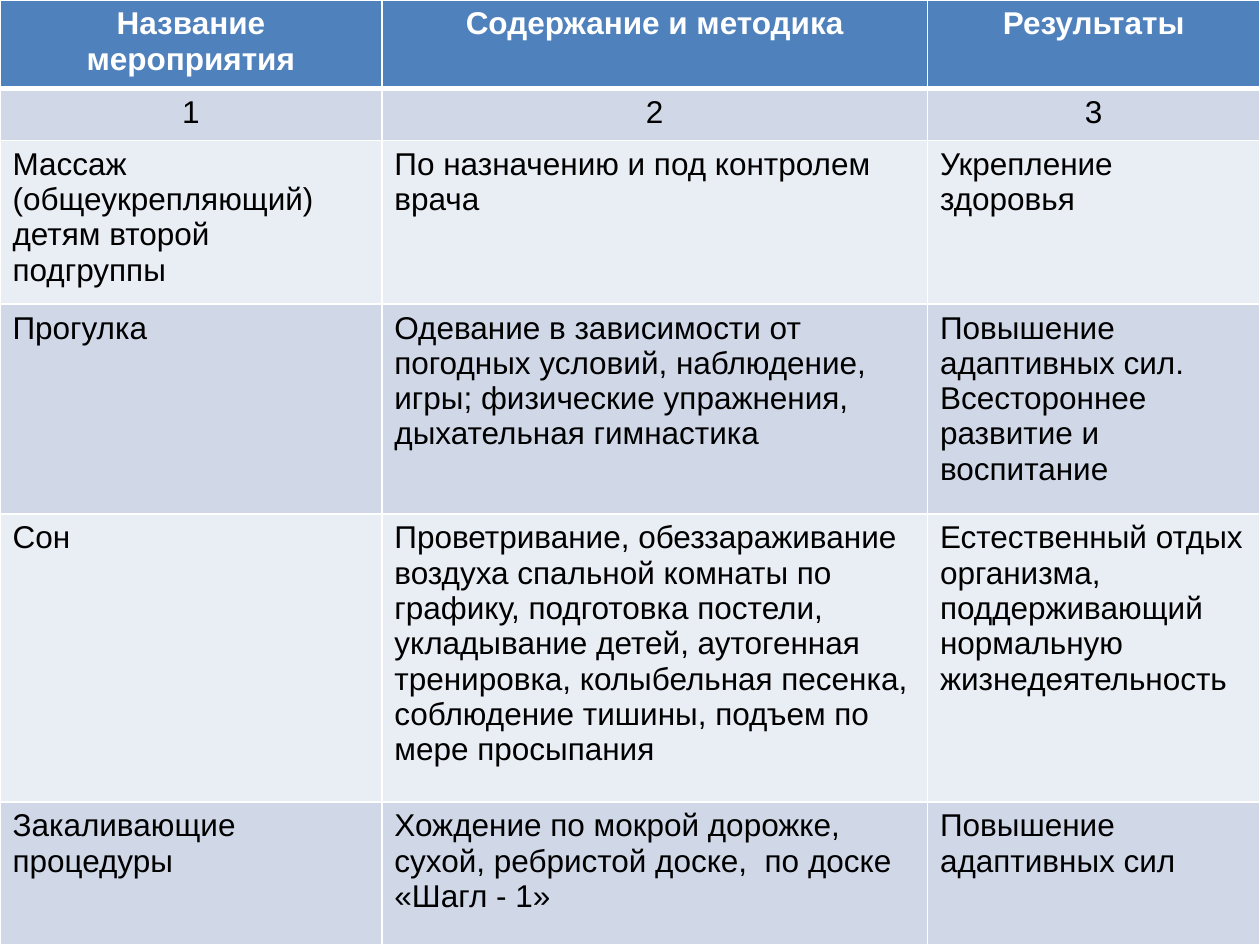
import pptx
import pptx.dml.color
import pptx.enum.text
import pptx.oxml.ns
import pptx.util
from lxml import etree

Pt = pptx.util.Pt

# Content
HEADER = ("Название мероприятия", "Содержание и методика", "Результаты")
NUMBERS = ("1", "2", "3")
ACTIVITIES = [
    ("Массаж (общеукрепляющий) детям второй подгруппы",
     "По назначению и под контролем врача",
     "Укрепление здоровья"),
    ("Прогулка",
     "Одевание в зависимости от погодных условий, наблюдение, игры; "
     "физические упражнения, дыхательная гимнастика",
     "Повышение адаптивных сил. Всестороннее развитие и воспитание"),
    ("Сон",
     "Проветривание, обеззараживание воздуха спальной комнаты по графику, "
     "подготовка постели, укладывание детей, аутогенная тренировка, "
     "колыбельная песенка, соблюдение тишины, подъем по мере просыпания",
     "Естественный отдых организма, поддерживающий нормальную "
     "жизнедеятельность"),
    ("Закаливающие процедуры",
     "Хождение по мокрой дорожке, сухой, ребристой доске,  по доске "
     "«Шагл - 1»",
     "Повышение адаптивных сил"),
]
ROWS = [HEADER, NUMBERS] + ACTIVITIES

# Layout and style
WIDTH, HEIGHT = 720, 540
COLUMN_WIDTHS = (218.2, 311.8, 190)
ROW_HEIGHTS = (50.4, 29.8, 93.6, 120, 164.5, 81.7)
COLORS = {
    "header": "4F81BD",
    "band_dark": "D0D8E8",
    "band_light": "E9EDF4",
    "border": "FFFFFF",
    "header_text": "FFFFFF",
    "text": "000000",
}


def rgb(name):
    return pptx.dml.color.RGBColor.from_string(COLORS[name])


def set_borders(cell, bottom, top):
    """Draw the four cell borders; widths are in points."""
    properties = cell._tc.get_or_add_tcPr()
    for side, width in (("L", 1), ("R", 1), ("T", top), ("B", bottom)):
        line = etree.SubElement(properties, pptx.oxml.ns.qn(f"a:ln{side}"),
                                w=str(Pt(width)))
        fill = etree.SubElement(line, pptx.oxml.ns.qn("a:solidFill"))
        etree.SubElement(fill, pptx.oxml.ns.qn("a:srgbClr"),
                         val=COLORS["border"])


def fill_cell(cell, text, row):
    is_header = row == 0
    set_borders(cell, bottom=3 if is_header else 1, top=3 if row == 1 else 1)
    band = "band_dark" if row % 2 else "band_light"
    cell.fill.solid()
    cell.fill.fore_color.rgb = rgb("header" if is_header else band)

    cell.text = text
    paragraph = cell.text_frame.paragraphs[0]
    if row < 2:
        paragraph.alignment = pptx.enum.text.PP_ALIGN.CENTER
    paragraph.font.name = "Arial"
    paragraph.font.size = Pt(18)
    paragraph.font.bold = is_header
    paragraph.font.color.rgb = rgb("header_text" if is_header else "text")


def main():
    presentation = pptx.Presentation()
    presentation.slide_width = Pt(WIDTH)
    presentation.slide_height = Pt(HEIGHT)
    slide = presentation.slides.add_slide(presentation.slide_layouts[6])

    # Table over the whole slide
    table = slide.shapes.add_table(len(ROWS), len(HEADER), Pt(0), Pt(0),
                                   Pt(WIDTH), Pt(HEIGHT)).table
    for column, width in zip(table.columns, COLUMN_WIDTHS):
        column.width = Pt(width)
    for table_row, height in zip(table.rows, ROW_HEIGHTS):
        table_row.height = Pt(height)

    # Cells
    for row, texts in enumerate(ROWS):
        for column, text in enumerate(texts):
            fill_cell(table.cell(row, column), text, row)

    presentation.save("out.pptx")


if __name__ == "__main__":
    main()
